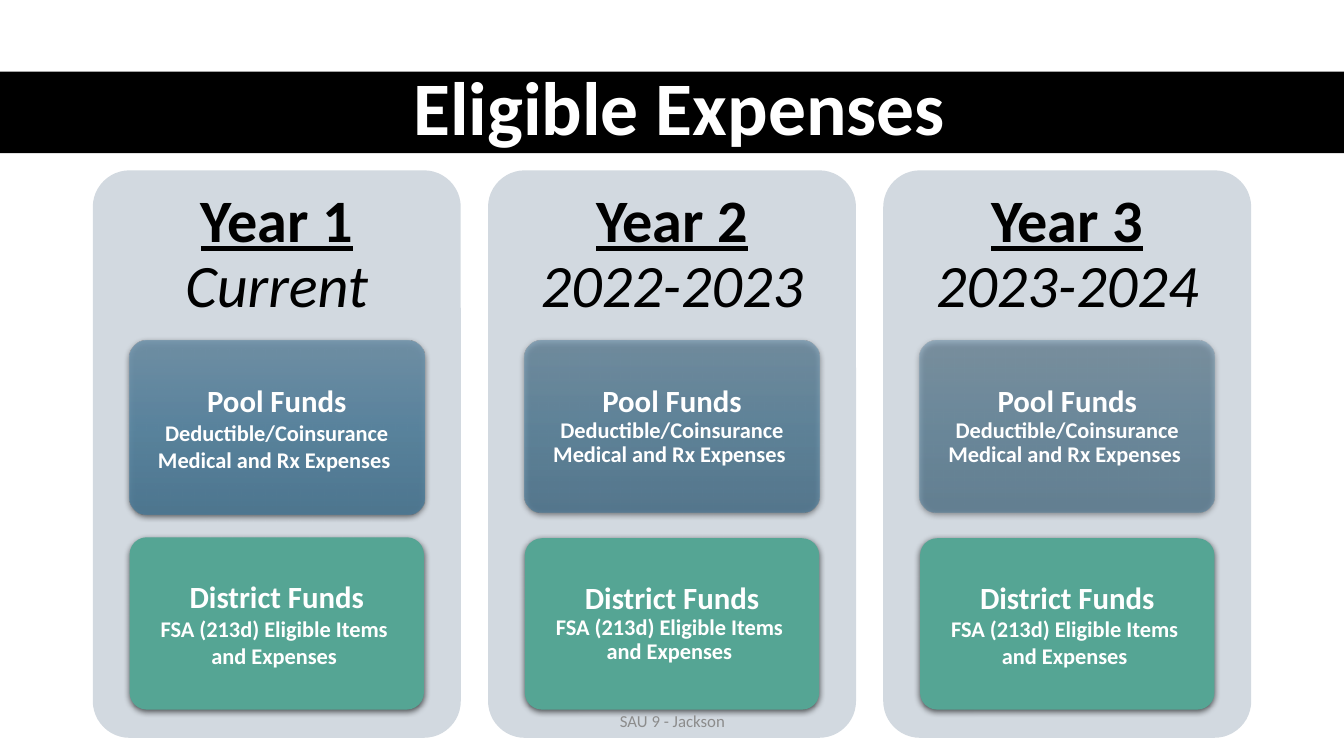
"""Builds the Eligible Expenses slide: three plan years with their funds."""
from pptx import Presentation
from pptx.dml.color import RGBColor
from pptx.enum import shapes, text
from pptx.oxml import parse_xml
from pptx.oxml.ns import nsdecls, qn
from pptx.util import Inches, Pt

TITLE = "Eligible Expenses"
FOOTER = "SAU 9 - Jackson"
POOL = ["Pool Funds\nDeductible/Coinsurance Medical and Rx Expenses "]
DISTRICT = ["District Funds", "FSA (213d) Eligible Items ", "and Expenses "]
YEARS = [
    {"heading": "Year 1\nCurrent", "opacity": 90, "spacing": (1.0, 1.0),
     "pool": (3.38, 1.72), "district": (5.33, 1.71)},
    {"heading": "Year 2\n2022-2023", "opacity": 74, "spacing": (0.9, 0.9),
     "pool": (3.38, 1.7), "district": (5.34, 1.7)},
    {"heading": "Year 3\n2023-2024", "opacity": 58, "spacing": (0.9, 1.0),
     "pool": (3.38, 1.7), "district": (5.34, 1.7)},
]
COLORS = {"band": "000000", "panel": "D2D9E0", "district": "55A594", "heading": "000000",
          "light": "FFFFFF", "footer": "8C8C8C"}
POOL_GRADIENT = {0: "7294AB", 50: "5A88A4", 100: "4D7995"}
FONT = "Calibri"
PANEL_LEFT, PANEL_TOP, PANEL_WIDTH, PANEL_HEIGHT, PANEL_PITCH = 0.92, 1.69, 3.65, 5.63, 3.92
HEADING_HEIGHT, CARD_WIDTH, CARD_INSET = 1.69, 2.92, 0.05


def add_block(slide, kind, box, color):
    block = slide.shapes.add_shape(kind, *map(Inches, box))
    block.shadow.inherit = False
    block.fill.solid()
    block.fill.fore_color.rgb = RGBColor.from_string(color)
    block.line.fill.background()
    if kind == shapes.MSO_SHAPE.ROUNDED_RECTANGLE:
        block.adjustments[0] = 0.1
    return block


def add_label(slide, box, paragraphs, insets=(0.1, 0.05), spacing=1.0):
    frame = slide.shapes.add_textbox(*map(Inches, box)).text_frame
    frame.word_wrap = True
    frame.vertical_anchor = text.MSO_ANCHOR.MIDDLE
    frame.margin_left = frame.margin_right = Inches(insets[0])
    frame.margin_top = frame.margin_bottom = Inches(insets[1])
    for index, words in enumerate(paragraphs):
        paragraph = frame.add_paragraph() if index else frame.paragraphs[0]
        paragraph.text = words
        paragraph.alignment = text.PP_ALIGN.CENTER
        paragraph.line_spacing = spacing
    return [run for paragraph in frame.paragraphs for run in paragraph.runs]


def style(run, size, color, bold=False, italic=False, underline=False):
    font = run.font
    font.name, font.size = FONT, Pt(size)
    font.bold, font.italic, font.underline = bold, italic, underline
    font.color.rgb = RGBColor.from_string(COLORS[color])


def add_card(slide, left, span, paragraphs, color, spacing):
    top, height = span
    card = add_block(slide, shapes.MSO_SHAPE.ROUNDED_RECTANGLE,
                     (left, top, CARD_WIDTH, height), color)
    card._element.spPr.find(qn("a:effectLst")).append(parse_xml(
        f'<a:outerShdw {nsdecls("a")} blurRad="{Pt(4.5)}" dist="{Pt(1.5)}" dir="5400000" '
        'algn="ctr" rotWithShape="0"><a:srgbClr val="000000"><a:alpha val="63000"/>'
        '</a:srgbClr></a:outerShdw>'))
    label_box = (left + CARD_INSET, top + CARD_INSET,
                 CARD_WIDTH - 2 * CARD_INSET, height - 2 * CARD_INSET)
    fund, *details = add_label(slide, label_box, paragraphs, (0.06, 0.05), spacing)
    style(fund, 22, "light", bold=True)
    for detail in details:
        style(detail, 16, "light", bold=True)
    return card


def fill_gradient(card, opacity):
    stops = "".join(
        f'<a:gs pos="{position * 1000}"><a:srgbClr val="{color}">'
        f'<a:alpha val="{opacity * 1000}"/></a:srgbClr></a:gs>'
        for position, color in POOL_GRADIENT.items())
    properties = card._element.spPr
    properties.replace(properties.find(qn("a:solidFill")), parse_xml(
        f'<a:gradFill {nsdecls("a")} rotWithShape="1"><a:gsLst>{stops}</a:gsLst>'
        '<a:lin ang="5400000" scaled="0"/></a:gradFill>'))


def add_year(slide, index, year):
    left = PANEL_LEFT + index * PANEL_PITCH
    card_left = left + (PANEL_WIDTH - CARD_WIDTH) / 2
    add_block(slide, shapes.MSO_SHAPE.ROUNDED_RECTANGLE,
              (left, PANEL_TOP, PANEL_WIDTH, PANEL_HEIGHT), COLORS["panel"])
    name, period = add_label(slide, (left, PANEL_TOP, PANEL_WIDTH, HEADING_HEIGHT),
                             [year["heading"]], (0.18, 0.18), 0.9)
    style(name, 43, "heading", bold=True, underline=True)
    style(period, 43, "heading", italic=True)
    pool_spacing, district_spacing = year["spacing"]
    pool = add_card(slide, card_left, year["pool"], POOL, POOL_GRADIENT[50], pool_spacing)
    fill_gradient(pool, year["opacity"])
    add_card(slide, card_left, year["district"], DISTRICT, COLORS["district"],
             district_spacing)


def main():
    """Assemble and save the slide."""
    deck = Presentation()
    deck.slide_width, deck.slide_height = Inches(13.33), Inches(7.5)
    slide = deck.slides.add_slide(deck.slide_layouts[6])
    add_block(slide, shapes.MSO_SHAPE.RECTANGLE, (0, 0.71, 13.33, 0.81), COLORS["band"])
    style(add_label(slide, (0.61, 0.7, 12.26, 0.81), [TITLE], spacing=0.9)[0],
          54, "light", bold=True)
    for index, year in enumerate(YEARS):
        add_year(slide, index, year)
    style(add_label(slide, (4.42, 6.95, 4.5, 0.4), [FOOTER])[0], 12, "footer")
    deck.save("out.pptx")


if __name__ == "__main__":
    main()
